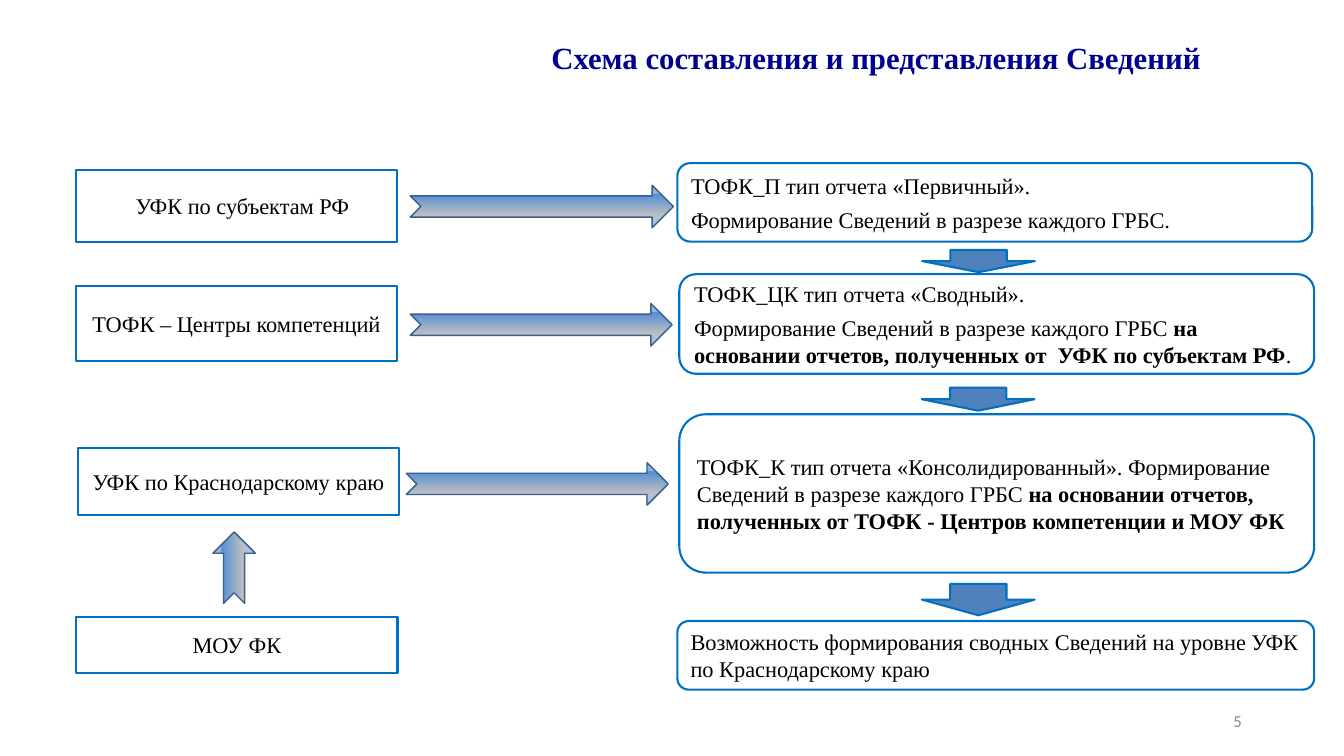
"""Build the slide on how the reports are compiled and submitted."""
from copy import deepcopy
from pptx import Presentation
from pptx.dml.color import RGBColor
from pptx.enum import shapes, text
from pptx.util import Cm, Pt

TITLE = "Схема составления и представления Сведений"
SERIF = "Times New Roman"
BLUE = "0070C0"
KIND = shapes.MSO_SHAPE
MID = text.MSO_ANCHOR.MIDDLE
LEFT, CENTER, RIGHT = text.PP_ALIGN.LEFT, text.PP_ALIGN.CENTER, text.PP_ALIGN.RIGHT

UNITS = [
    ((1.91, 4.29, 8.1, 1.8), "УФК по субъектам РФ", 0.55),
    ((1.91, 7.21, 8.1, 1.88), "ТОФК – Центры компетенций", 0.25),
    ((1.96, 11.3, 8.1, 1.68), "УФК по Краснодарскому краю", 0.25),
    ((1.92, 15.54, 8.1, 1.42), "МОУ ФК", 0.25),
]
STEPS = [
    ((17.07, 4.11, 16, 1.98), [
        ["ТОФК_П тип отчета «Первичный»."],
        ["Формирование Сведений в разрезе каждого ГРБС."]]),
    ((17.12, 6.91, 16, 2.51), [
        ["ТОФК_ЦК тип отчета «Сводный»."],
        ["Формирование Сведений в разрезе каждого ГРБС ",
         "на основании отчетов, полученных от  УФК по субъектам РФ", "."]]),
    ((17.12, 10.44, 16, 3.99), [
        ["ТОФК_К тип отчета «Консолидированный». Формирование Сведений "
         "в разрезе каждого ГРБС ",
         "на основании отчетов, полученных от ТОФК - Центров компетенции и МОУ ФК"]]),
    ((17.07, 15.65, 16.05, 1.73), [
        ["Возможность формирования сводных Сведений на уровне УФК "
         "по Краснодарскому краю"]]),
]
DOWN = [(24.38, 5.16, 0.56, 2.84), (24.36, 8.64, 0.58, 2.84), (24.26, 13.69, 0.79, 2.84)]
FLOWS = [
    ((10.34, 4.67, 6.63, 1.07), 0),
    ((10.34, 7.65, 6.6, 1.07), 0),
    ((10.24, 11.66, 6.6, 1.07), 0),
    ((5, 13.77, 1.8, 1.07), 270),
]
STOPS = [(0.19, "95B3D7"), (0.21, "558ED5"), (0.7, "BBBEC1"), (1, "A3C4FF")]


def color(code):
    return RGBColor.from_string(code)


def style(font, name, size, code, bold=False):
    font.name, font.size, font.bold = name, Pt(size), bold
    font.color.rgb = color(code)


def shape(slide, kind, place, line=BLUE, width=1.5, turn=0):
    item = slide.shapes.add_shape(kind, *map(Cm, place))
    item.shadow.inherit = False
    item.rotation = turn
    item.line.color.rgb = color(line)
    item.line.width = Pt(width)
    return item


def solid(item, code):
    item.fill.solid()
    item.fill.fore_color.rgb = color(code)


def box(slide, kind, place, paras, align, inset=0.25):
    item = shape(slide, kind, place)
    solid(item, "FFFFFF")
    frame = item.text_frame
    frame.word_wrap, frame.vertical_anchor = True, MID
    frame.margin_left = Cm(inset)
    for i, parts in enumerate(paras):
        para = frame.add_paragraph() if i else frame.paragraphs[0]
        para.alignment = align
        para.space_before = Pt(5 if i else 0)
        style(para.font, SERIF, 16, "000000")
        for j, part in enumerate(parts):
            run = para.add_run()
            run.text = part
            if j % 2:
                run.font.bold = True


def blend(item):
    item.fill.gradient()
    item.fill.gradient_angle = 270
    stops = item.fill._fill._gradFill.gsLst
    while len(stops) < len(STOPS):
        stops.append(deepcopy(stops[0]))
    for stop, (spot, code) in zip(item.fill.gradient_stops, STOPS):
        stop.position = spot
        stop.color.rgb = color(code)


def label(item, words, align, *look):
    frame = item.text_frame
    frame.word_wrap = True
    para = frame.paragraphs[0]
    para.text, para.alignment = words, align
    style(para.font, *look)
    return frame


def main():
    deck = Presentation()
    deck.slide_width, deck.slide_height = Cm(33.87), Cm(19.05)
    slide = deck.slides.add_slide(deck.slide_layouts[5])

    title = slide.shapes.title
    title.left, title.top, title.width, title.height = map(Cm, (11.84, 0.84, 20.47, 1.19))
    frame = label(title, TITLE, CENTER, SERIF, 22, "000090", True)
    frame.vertical_anchor = text.MSO_ANCHOR.TOP
    frame.auto_size = text.MSO_AUTO_SIZE.NONE

    for place, words, inset in UNITS:
        box(slide, KIND.RECTANGLE, place, [[words]], CENTER, inset)
    for place, paras in STEPS:
        box(slide, KIND.ROUNDED_RECTANGLE, place, paras, LEFT)
    for place in DOWN:
        solid(shape(slide, KIND.RIGHT_ARROW, place, turn=90), "4F81BD")
    for place, turn in FLOWS:
        blend(shape(slide, KIND.NOTCHED_RIGHT_ARROW, place, "3A5F8C", 1, turn))

    number = slide.shapes.add_textbox(*map(Cm, (23.93, 17.65, 7.62, 1.02)))
    label(number, "5", RIGHT, "Calibri", 12, "898989").vertical_anchor = MID
    deck.save("out.pptx")


if __name__ == "__main__":
    main()
